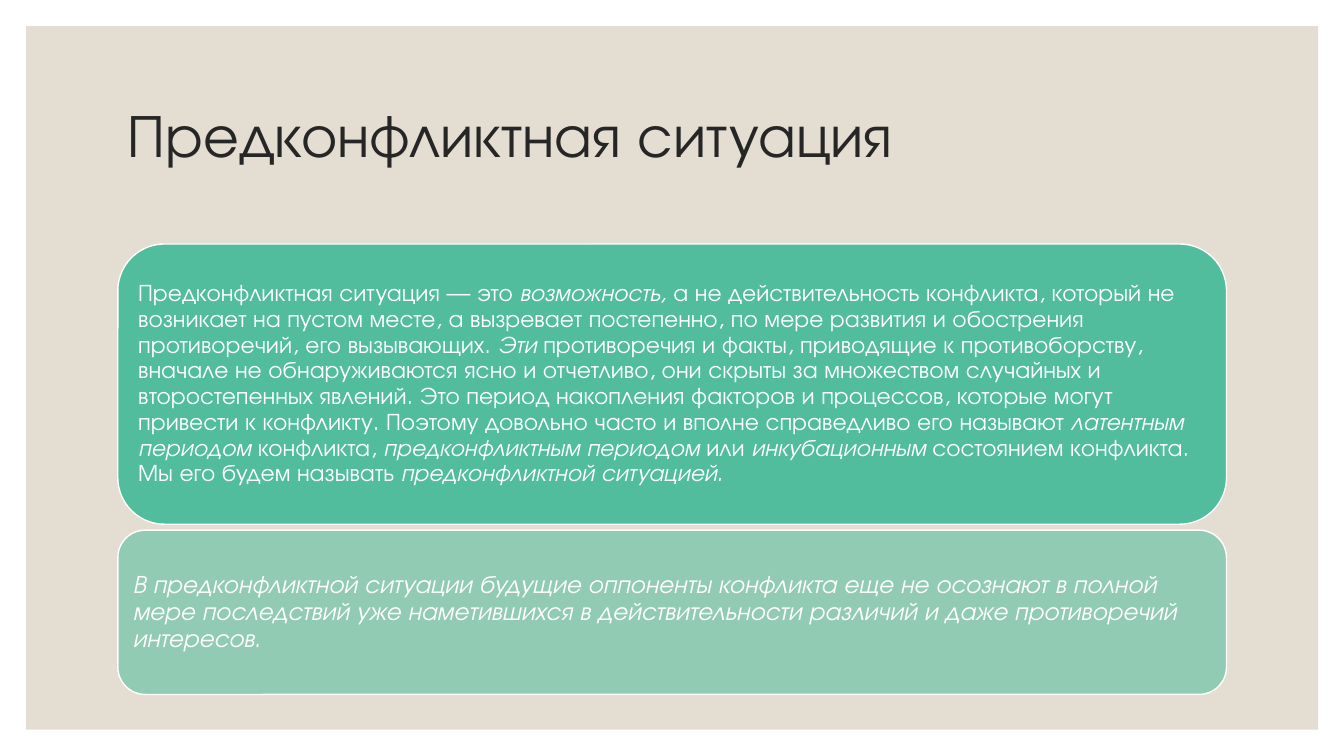
from dataclasses import dataclass

from lxml.etree import SubElement
from pptx import Presentation
from pptx.dml.color import RGBColor
from pptx.enum.shapes import MSO_SHAPE
from pptx.enum.text import MSO_ANCHOR, PP_ALIGN
from pptx.oxml.ns import qn
from pptx.util import Cm, Pt


@dataclass(frozen=True)
class Theme:
    font: str = "TeX Gyre Adventor"
    backdrop: RGBColor = RGBColor(0xE3, 0xDE, 0xD1)
    heading: RGBColor = RGBColor(0x26, 0x26, 0x26)
    accent: RGBColor = RGBColor(0x42, 0xBA, 0x97)
    light: RGBColor = RGBColor(0xFF, 0xFF, 0xFF)
    heading_size: float = 43.2
    definition_size: float = 17
    remark_size: float = 18
    line_spacing: float = 0.9


class SlideBuilder:
    def __init__(self, slide, theme):
        self.slide = slide
        self.theme = theme

    def backdrop(self, left, top, width, height):
        panel = self.slide.shapes.add_shape(
            MSO_SHAPE.RECTANGLE, Cm(left), Cm(top), Cm(width), Cm(height))
        panel.shadow.inherit = False
        panel.fill.solid()
        panel.fill.fore_color.rgb = self.theme.backdrop
        panel.line.fill.background()

    def styled_paragraph(self, frame, size, color):
        frame.word_wrap = True
        frame.vertical_anchor = MSO_ANCHOR.MIDDLE
        paragraph = frame.paragraphs[0]
        paragraph.alignment = PP_ALIGN.LEFT
        paragraph.line_spacing = self.theme.line_spacing
        paragraph.font.name = self.theme.font
        paragraph.font.size = Pt(size)
        paragraph.font.color.rgb = color
        return paragraph

    def heading(self, text, left, top, width, height):
        title = self.slide.shapes.add_textbox(Cm(left), Cm(top), Cm(width), Cm(height))
        paragraph = self.styled_paragraph(
            title.text_frame, self.theme.heading_size, self.theme.heading)
        paragraph.add_run().text = text

    def card(self, phrases, size, opacity, left, top, width, height):
        card = self.slide.shapes.add_shape(
            MSO_SHAPE.ROUNDED_RECTANGLE, Cm(left), Cm(top), Cm(width), Cm(height))
        card.shadow.inherit = False
        card.fill.solid()
        card.fill.fore_color.rgb = self.theme.accent
        tint = card._element.spPr.find(qn("a:solidFill")).find(qn("a:srgbClr"))
        SubElement(tint, qn("a:alpha")).set("val", str(opacity * 1000))
        card.line.color.rgb = self.theme.light
        card.line.width = Pt(1)
        frame = card.text_frame
        frame.margin_left = frame.margin_right = Cm(0.17)
        frame.margin_top = frame.margin_bottom = Cm(0.17)
        paragraph = self.styled_paragraph(frame, size, self.theme.light)
        if len(phrases) == 1:
            paragraph.font.italic = phrases[0][1]
        for text, italic in phrases:
            run = paragraph.add_run()
            run.text = text
            if len(phrases) > 1:
                run.font.italic = italic


DEFINITION = [
    ("Предконфликтная ситуация — это ", False),
    ("возможность,", True),
    (" а не действительность конфликта, который не возникает на пустом месте, "
     "а вызревает постепенно, по мере развития и обострения противоречий, "
     "его вызывающих. ", False),
    ("Эти", True),
    (" противоречия и факты, приводящие к противоборству, вначале не "
     "обнаруживаются ясно и отчетливо, они скрыты за множеством случайных и "
     "второстепенных явлений. Это период накопления факторов и процессов, "
     "которые могут привести к конфликту. Поэтому довольно часто и вполне "
     "справедливо его называют ", False),
    ("латентным периодом", True),
    (" конфликта, ", False),
    ("предконфликтным периодом", True),
    (" или ", False),
    ("инкубационным", True),
    (" состоянием конфликта. Мы его будем называть ", False),
    ("предконфликтной ситуацией.", True),
]
REMARK = [
    ("В предконфликтной ситуации будущие оппоненты конфликта еще не осознают в "
     "полной мере последствий уже наметившихся в действительности различий и "
     "даже противоречий интересов.", True),
]


def main():
    presentation = Presentation()
    presentation.slide_width = Cm(33.87)
    presentation.slide_height = Cm(19.05)
    slide = presentation.slides.add_slide(presentation.slide_layouts[6])
    theme = Theme()
    builder = SlideBuilder(slide, theme)
    left, card_width = 2.97, 27.94

    builder.backdrop(0.66, 0.66, 32.56, 17.73)
    builder.heading("Предконфликтная ситуация", left, 1.78, 20.8, 3.38)
    builder.card(DEFINITION, theme.definition_size, 90, left, 6.15, card_width, 7.06)
    builder.card(REMARK, theme.remark_size, 50, left, 13.36, card_width, 4.14)
    presentation.save("out.pptx")


if __name__ == "__main__":
    main()
